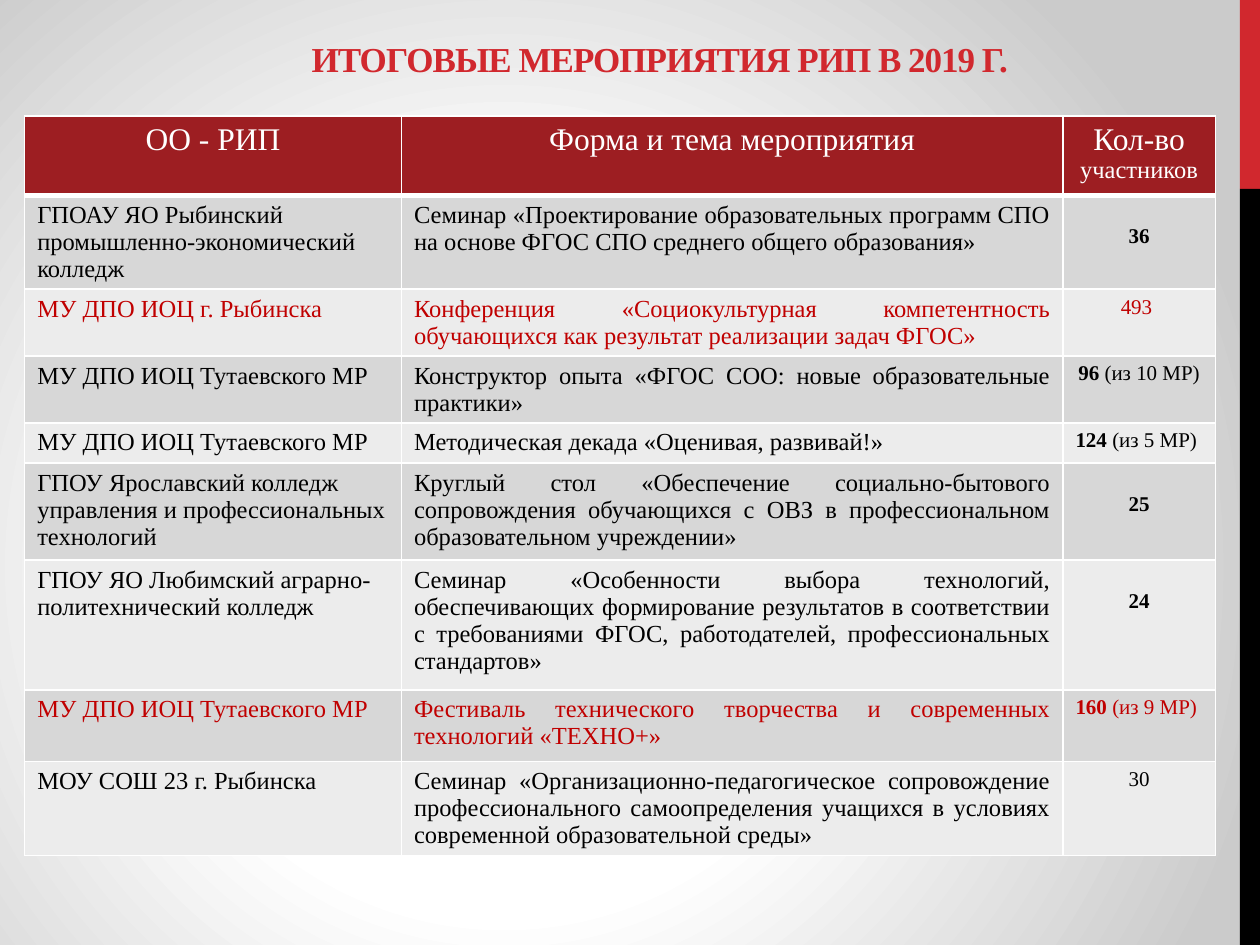
import pptx
import pptx.dml.color
import pptx.enum.shapes
import pptx.enum.text
import pptx.oxml
import pptx.oxml.ns
import pptx.util

Pt = pptx.util.Pt
RGBColor = pptx.dml.color.RGBColor
Align = pptx.enum.text.PP_ALIGN

FONT = "Times New Roman"
RED = RGBColor(0xD1, 0x28, 0x2E)
HEADER_RED = RGBColor(0x9D, 0x1E, 0x22)
ACCENT_RED = RGBColor(0xC0, 0x00, 0x00)
BLACK = RGBColor(0x00, 0x00, 0x00)
WHITE = RGBColor(0xFF, 0xFF, 0xFF)
GREY = RGBColor(0xCB, 0xCB, 0xCB)
BANDS = (RGBColor(0xD7, 0xD7, 0xD7), RGBColor(0xEC, 0xEC, 0xEC))

COLUMN_WIDTHS = (215.3, 378, 87.1)
ROW_HEIGHTS = (45.4, 51.1, 33.1, 35.3, 23, 55.4, 74.2, 41, 41)
CELL_MARGIN = 3.6
LOWERED_MARGIN = 17

HEADERS = (
    (("ОО - РИП", 18),),
    (("Форма и тема мероприятия", 18),),
    (("Кол-во ", 18), ("участников", 14)),
)

# organisation, event, bold count, plain count, count alignment, top margin, colour
EVENTS = (
    ("ГПОАУ ЯО Рыбинский промышленно-экономический колледж",
     "Семинар «Проектирование образовательных программ СПО на основе ФГОС СПО "
     "среднего общего образования»",
     "36", "", Align.CENTER, LOWERED_MARGIN, BLACK),
    ("МУ ДПО ИОЦ г. Рыбинска",
     "Конференция «Социокультурная компетентность обучающихся как результат "
     "реализации задач ФГОС»",
     "", "493 ", Align.CENTER, CELL_MARGIN, ACCENT_RED),
    ("МУ ДПО ИОЦ Тутаевского МР",
     "Конструктор опыта «ФГОС СОО: новые образовательные практики»",
     "96", " (из 10 МР)", Align.CENTER, CELL_MARGIN, BLACK),
    ("МУ ДПО ИОЦ Тутаевского МР",
     "Методическая декада «Оценивая, развивай!»",
     "124 ", "(из 5 МР)", Align.LEFT, CELL_MARGIN, BLACK),
    ("ГПОУ Ярославский колледж управления и профессиональных технологий",
     "Круглый стол «Обеспечение социально-бытового сопровождения обучающихся "
     "с ОВЗ в профессиональном образовательном учреждении»",
     "25", "", Align.CENTER, LOWERED_MARGIN, BLACK),
    ("ГПОУ ЯО Любимский аграрно-политехнический колледж",
     "Семинар «Особенности выбора технологий, обеспечивающих формирование "
     "результатов в соответствии с требованиями ФГОС, работодателей, "
     "профессиональных стандартов»",
     "24", "", Align.CENTER, LOWERED_MARGIN, BLACK),
    ("МУ ДПО ИОЦ Тутаевского МР",
     "Фестиваль технического творчества и современных технологий «ТЕХНО+»",
     "160 ", "(из 9 МР)", Align.LEFT, CELL_MARGIN, ACCENT_RED),
    ("МОУ СОШ 23 г. Рыбинска",
     "Семинар «Организационно-педагогическое сопровождение профессионального "
     "самоопределения учащихся в условиях современной образовательной среды»",
     "", "30", Align.CENTER, CELL_MARGIN, BLACK),
)


def set_radial_background(slide):
    slide.background.fill.solid()
    properties = slide.element.xpath(".//p:bgPr")[0]
    stops = "".join(
        f'<a:gs pos="{percent * 1000}"><a:srgbClr val="{color}"/></a:gs>'
        for percent, color in ((0, WHITE), (44, WHITE), (100, GREY)))
    gradient = pptx.oxml.parse_xml(
        f'<a:gradFill {pptx.oxml.ns.nsdecls("a")} rotWithShape="1">'
        f'<a:gsLst>{stops}</a:gsLst><a:path path="circle">'
        '<a:fillToRect l="40000" t="60000" r="60000" b="40000"/>'
        '</a:path></a:gradFill>')
    properties.replace(properties[0], gradient)


def add_side_bar(slide, top, height, color):
    bar = slide.shapes.add_shape(
        pptx.enum.shapes.MSO_SHAPE.RECTANGLE,
        Pt(708.5), Pt(top), Pt(11.5), Pt(height))
    bar.shadow.inherit = False
    bar.fill.solid()
    bar.fill.fore_color.rgb = color
    bar.line.fill.background()


def style_font(font, size, color, bold=False):
    font.name = FONT
    font.size = Pt(size)
    font.bold = bold
    font.color.rgb = color


def set_title(slide, text):
    title = slide.shapes.title
    title.left, title.top = Pt(87.8), Pt(15.1)
    title.width, title.height = Pt(578.2), Pt(33.8)
    frame = title.text_frame
    frame.word_wrap = True
    frame.auto_size = pptx.enum.text.MSO_AUTO_SIZE.NONE
    frame.vertical_anchor = pptx.enum.text.MSO_ANCHOR.BOTTOM
    heading = frame.paragraphs[0]
    heading.alignment = Align.CENTER
    run = heading.add_run()
    run.text = text
    style_font(run.font, 20, RED, bold=True)
    run.font._element.set("spc", "-60")


def set_borders(cell, top=1, bottom=1):
    """Draw white cell borders; widths are in points."""
    properties = cell._tc.get_or_add_tcPr()
    for side, width in (("L", 1), ("R", 1), ("T", top), ("B", bottom)):
        properties.append(pptx.oxml.parse_xml(
            f'<a:ln{side} {pptx.oxml.ns.nsdecls("a")} w="{Pt(width)}">'
            f'<a:solidFill><a:srgbClr val="{WHITE}"/></a:solidFill>'
            f'</a:ln{side}>'))


def fill_cell(cell, runs, color, fill, alignment, margin_top=CELL_MARGIN):
    """Write runs given as (text, size, bold) into a filled cell."""
    cell.fill.solid()
    cell.fill.fore_color.rgb = fill
    cell.margin_top = Pt(margin_top)
    paragraph = cell.text_frame.paragraphs[0]
    paragraph.alignment = alignment
    for text, size, bold in runs:
        run = paragraph.add_run()
        run.text = text
        style_font(run.font, size, color, bold)


def add_events_table(slide):
    table = slide.shapes.add_table(
        len(ROW_HEIGHTS), len(COLUMN_WIDTHS), Pt(14.1), Pt(66.2),
        Pt(sum(COLUMN_WIDTHS)), Pt(sum(ROW_HEIGHTS))).table
    table.first_row = table.horz_banding = False
    for column, width in zip(table.columns, COLUMN_WIDTHS):
        column.width = Pt(width)
    for index, (row, height) in enumerate(zip(table.rows, ROW_HEIGHTS)):
        row.height = Pt(height)
        for cell in row.cells:
            set_borders(cell, top=3 if index == 1 else 1,
                        bottom=3 if index == 0 else 1)

    for cell, parts in zip(table.rows[0].cells, HEADERS):
        runs = [(text, size, False) for text, size in parts]
        fill_cell(cell, runs, WHITE, HEADER_RED, Align.CENTER)

    for index, event in enumerate(EVENTS):
        organisation, topic, bold, plain, alignment, margin, color = event
        band = BANDS[index % 2]
        count = [(text, 12, is_bold)
                 for text, is_bold in ((bold, True), (plain, False)) if text]
        cells = table.rows[index + 1].cells
        fill_cell(cells[0], [(organisation, 14, False)], color, band, Align.LEFT)
        fill_cell(cells[1], [(topic, 14, False)], color, band, Align.JUSTIFY)
        fill_cell(cells[2], count, color, band, alignment, margin)


def main():
    presentation = pptx.Presentation()
    presentation.slide_width, presentation.slide_height = Pt(720), Pt(540)
    slide = presentation.slides.add_slide(presentation.slide_layouts[5])
    set_radial_background(slide)
    add_side_bar(slide, 0, 108, RED)
    add_side_bar(slide, 108, 432, BLACK)
    set_title(slide, "ИТОГОВЫЕ МЕРОПРИЯТИЯ РИП В 2019 Г.")
    add_events_table(slide)
    presentation.save("out.pptx")


if __name__ == "__main__":
    main()
